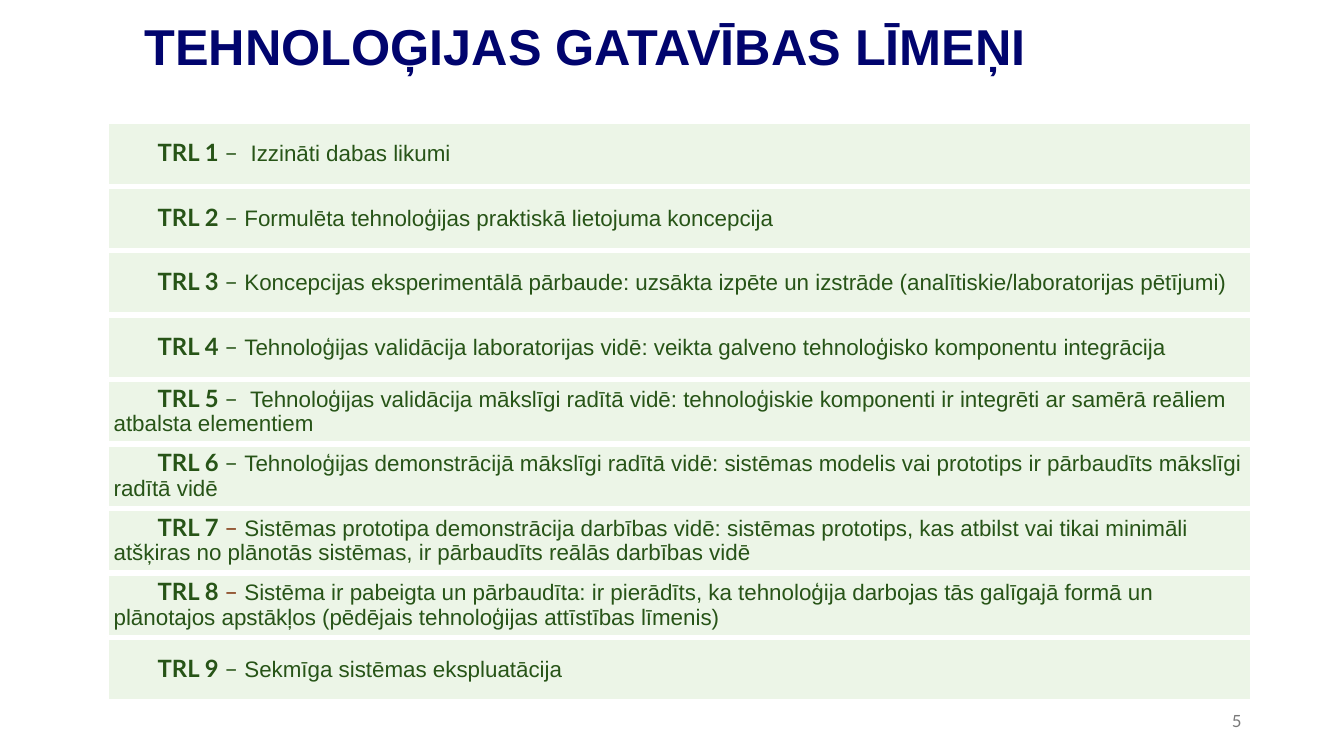
from pptx import Presentation
from pptx.dml.color import RGBColor
from pptx.enum.shapes import MSO_SHAPE as Shape
from pptx.enum.text import MSO_ANCHOR as Anchor, MSO_AUTO_SIZE as Fit, PP_ALIGN as Align
from pptx.util import Pt

NAVY = RGBColor(0x01, 0x04, 0x6E)
GREEN = RGBColor(0x27, 0x54, 0x17)
BROWN = RGBColor(0x80, 0x35, 0x0E)
PALE = RGBColor(0xEC, 0xF5, 0xE7)
GREY = RGBColor(0x79, 0x79, 0x79)
WHITE = RGBColor(0xFF, 0xFF, 0xFF)

HEAD = {"name": "Arial", "size": Pt(36), "bold": True}
CODE = {"name": "Lato", "size": Pt(17), "bold": True}
DASH = {"name": "Lato", "size": Pt(17), "bold": False}
BODY = {"name": "Arial", "size": Pt(16), "bold": False}
PAGE = {"name": "Lato", "size": Pt(12)}

# Text after each dash, with the dash colour
LEVELS = [
    (" Izzināti dabas likumi", GREEN),
    ("Formulēta tehnoloģijas praktiskā lietojuma koncepcija", GREEN),
    ("Koncepcijas eksperimentālā pārbaude: uzsākta izpēte un izstrāde "
     "(analītiskie/laboratorijas pētījumi)", GREEN),
    ("Tehnoloģijas validācija laboratorijas vidē: veikta galveno "
     "tehnoloģisko komponentu integrācija", GREEN),
    (" Tehnoloģijas validācija mākslīgi radītā vidē: tehnoloģiskie komponenti "
     "ir integrēti ar samērā reāliem atbalsta elementiem", GREEN),
    ("Tehnoloģijas demonstrācijā mākslīgi radītā vidē: sistēmas modelis "
     "vai prototips ir pārbaudīts mākslīgi radītā vidē", GREEN),
    ("Sistēmas prototipa demonstrācija darbības vidē: sistēmas prototips, "
     "kas atbilst vai tikai minimāli atšķiras no plānotās sistēmas, "
     "ir pārbaudīts reālās darbības vidē", BROWN),
    ("Sistēma ir pabeigta un pārbaudīta: ir pierādīts, ka tehnoloģija darbojas "
     "tās galīgajā formā un plānotajos apstākļos "
     "(pēdējais tehnoloģijas attīstības līmenis)", BROWN),
    ("Sekmīga sistēmas ekspluatācija", GREEN),
]


def put(obj, vals):
    for key, val in vals.items():
        setattr(obj, key, val)


def add_run(para, text, look, color):
    run = para.add_run()
    run.text = text
    put(run.font, look)
    run.font.color.rgb = color


def add_title(slide, x, y, w, h):
    title = slide.shapes.title
    put(title, {"left": Pt(x), "top": Pt(y), "width": Pt(w), "height": Pt(h)})
    put(title.text_frame, {"auto_size": Fit.NONE, "word_wrap": True,
                           "vertical_anchor": Anchor.TOP})
    para = title.text_frame.paragraphs[0]
    put(para, {"alignment": Align.CENTER, "line_spacing": 0.9})
    add_run(para, "TEHNOLOĢIJAS GATAVĪBAS LĪMEŅI", HEAD, NAVY)


def add_level(slide, num, text, tint, x, y, w, h):
    bar = slide.shapes.add_shape(Shape.RECTANGLE, Pt(x), Pt(y), Pt(w), Pt(h))
    bar.shadow.inherit = False
    bar.fill.solid()
    bar.fill.fore_color.rgb = PALE
    bar.line.color.rgb = WHITE
    bar.line.width = Pt(1.5)
    put(bar.text_frame, {"word_wrap": True, "vertical_anchor": Anchor.MIDDLE,
                         "margin_left": Pt(4.2), "margin_right": Pt(4.2),
                         "margin_top": Pt(3), "margin_bottom": Pt(3)})
    para = bar.text_frame.paragraphs[0]
    put(para, {"alignment": Align.LEFT, "line_spacing": 0.9})
    # Only the first line is set in
    props = para._p.get_or_add_pPr()
    props.set("marL", "0")
    props.set("indent", str(Pt(31.5)))
    add_run(para, f"TRL {num} ", CODE, GREEN)
    add_run(para, "– ", DASH, tint)
    add_run(para, text, BODY, GREEN)


def add_levels(slide, x, y, w, h):
    gap = 2.1
    high = (h + gap) / len(LEVELS) - gap
    for idx, (text, tint) in enumerate(LEVELS):
        add_level(slide, idx + 1, text, tint, x, y + idx * (high + gap), w, high)


def add_page(slide, x, y, w, h):
    box = slide.shapes.add_textbox(Pt(x), Pt(y), Pt(w), Pt(h))
    put(box.text_frame, {"word_wrap": True, "vertical_anchor": Anchor.MIDDLE})
    para = box.text_frame.paragraphs[0]
    para.alignment = Align.RIGHT
    add_run(para, "5", PAGE, GREY)


def main():
    deck = Presentation()
    put(deck, {"slide_width": Pt(960), "slide_height": Pt(540)})
    slide = deck.slides.add_slide(deck.slide_layouts[5])
    add_title(slide, 69.8, 12.2, 697, 81.4)
    add_page(slide, 678, 500.4, 216, 28.8)
    add_levels(slide, 77, 87.9, 817, 412.5)
    deck.save("out.pptx")


if __name__ == "__main__":
    main()
